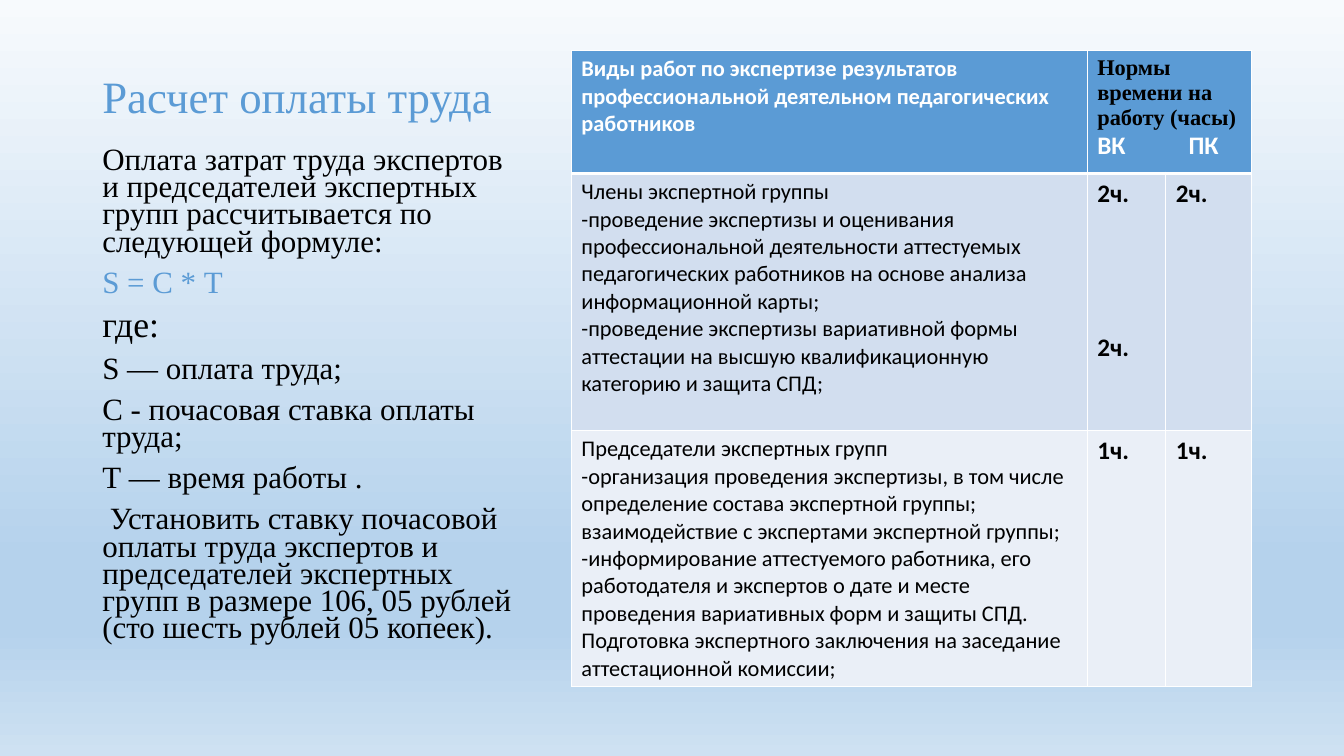
from lxml.etree import SubElement
from pptx import Presentation
from pptx.dml.color import RGBColor
from pptx.enum.text import MSO_ANCHOR
from pptx.oxml import parse_xml
from pptx.oxml.ns import nsdecls, qn
from pptx.util import Cm, Pt

SERIF, SANS = "Times New Roman", "Calibri"
BLUE, BLACK, WHITE = "5B9BD5", "000000", "FFFFFF"
ROW_FILLS = [BLUE, "D2DEEF", "EAEFF7"]
BACKGROUND_STOPS = [(0, "F7FAFD"), (74, "B5D2EC"), (83, "B5D2EC"), (100, "CEE1F2")]


def color(value):
    return RGBColor.from_string(value)


def add_span(para, text, font=SERIF, size=22.1, ink=BLACK, bold=False):
    span = para.add_run()
    span.text = text
    span.font.name = font
    span.font.size = Pt(size)
    span.font.bold = bold
    span.font.color.rgb = color(ink)


def fill_frame(frame, paragraphs, spacing=None, before=0):
    """Each paragraph is a list of (text, format) pairs."""
    for index, spans in enumerate(paragraphs):
        para = frame.add_paragraph() if index else frame.paragraphs[0]
        para.line_spacing = spacing
        para.space_before = Pt(before)
        for text, look in spans:
            add_span(para, text, **look)


class SlideBuilder:
    def __init__(self, page):
        self.page = page

    def background(self, stops):
        marks = "".join(
            f'<a:gs pos="{place * 1000}"><a:srgbClr val="{ink}"/></a:gs>'
            for place, ink in stops)
        self.page.element.cSld.insert(0, parse_xml(
            f'<p:bg {nsdecls("p", "a")}><p:bgPr><a:gradFill rotWithShape="1">'
            f'<a:gsLst>{marks}</a:gsLst><a:lin ang="5400000" scaled="0"/>'
            '</a:gradFill><a:effectLst/></p:bgPr></p:bg>'))

    def text(self, left, top, width, height, paragraphs,
             anchor=MSO_ANCHOR.TOP, **spacing):
        box = self.page.shapes.add_textbox(Cm(left), Cm(top), Cm(width), Cm(height))
        frame = box.text_frame
        frame.word_wrap = True
        frame.vertical_anchor = anchor
        fill_frame(frame, paragraphs, **spacing)
        return frame

    def table(self, left, top, widths, heights):
        table = self.page.shapes.add_table(
            len(heights), len(widths), Cm(left), Cm(top),
            Cm(sum(widths)), Cm(sum(heights))).table
        for column, width in zip(table.columns, widths):
            column.width = Cm(width)
        for number, (row, height) in enumerate(zip(table.rows, heights)):
            row.height = Cm(height)
            for cell in row.cells:
                cell.fill.solid()
                cell.fill.fore_color.rgb = color(ROW_FILLS[number])
                self.borders(cell, top=3 if number == 1 else 1,
                             bottom=3 if number == 0 else 1)
        return table

    def borders(self, cell, top, bottom):
        properties = cell._tc.get_or_add_tcPr()
        sides = [("L", 1), ("R", 1), ("T", top), ("B", bottom)]
        for position, (side, width) in enumerate(sides):
            properties.insert(position, parse_xml(
                f'<a:ln{side} {nsdecls("a")} w="{Pt(width)}"><a:solidFill>'
                f'<a:srgbClr val="{WHITE}"/></a:solidFill></a:ln{side}>'))


def build():
    deck = Presentation()
    deck.slide_width, deck.slide_height = Cm(33.87), Cm(19.05)
    slide = SlideBuilder(deck.slides.add_slide(deck.slide_layouts[6]))
    slide.background(BACKGROUND_STOPS)

    # Title
    slide.text(2.33, 1.27, 10.92, 1.96,
               [[("Расчет оплаты труда", dict(size=32, ink=BLUE))]],
               anchor=MSO_ANCHOR.BOTTOM, spacing=0.9)

    # Payment formula
    formula = slide.text(2.33, 3.63, 10.92, 12.65, [
        [("Оплата затрат труда экспертов и председателей экспертных групп "
          "рассчитывается по следующей формуле:", {})],
        [("S = C * Т", dict(ink=BLUE))],
        [("где:", dict(size=25.5))],
        [("S — оплата труда;", {})],
        [("С - почасовая ставка оплаты труда;", {})],
        [("Т — время работы .", {})],
        [("Установить ставку почасовой оплаты труда экспертов и председателей "
          "экспертных групп в размере 106, 05 рублей "
          "(сто шесть рублей 05 копеек).", {})],
    ], spacing=0.73, before=10)
    formula.paragraphs[-1]._p.get_or_add_pPr().set("indent", str(Cm(0.19)))

    # Table of working hours
    table = slide.table(14.4, 1.27, [13.0, 1.98, 2.16], [3.1, 6.48, 6.45])
    table.cell(0, 1).merge(table.cell(0, 2))
    heading = dict(font=SANS, size=16, ink=WHITE, bold=True)
    plain = dict(font=SANS, size=16)
    hours = dict(font=SANS, size=18, bold=True)
    contents = {
        (0, 0): [("Виды работ по экспертизе результатов профессиональной "
                  "деятельном педагогических работников", heading)],
        (0, 1): [("Нормы времени на работу (часы)", dict(size=16, bold=True)),
                 ("ВК\tПК", dict(hours, ink=WHITE))],
        (1, 0): [("Члены экспертной группы", plain),
                 ("-проведение экспертизы и оценивания профессиональной "
                  "деятельности аттестуемых педагогических работников на основе "
                  "анализа информационной карты;", plain),
                 ("-проведение экспертизы вариативной формы аттестации на высшую "
                  "квалификационную категорию и защита СПД;", plain)],
        (1, 1): [("2ч.", hours), ("2ч.", hours)],
        (1, 2): [("2ч.", hours)],
        (2, 0): [("Председатели экспертных групп", plain),
                 ("-организация проведения экспертизы, в том числе определение "
                  "состава экспертной группы; взаимодействие с экспертами "
                  "экспертной группы;", plain),
                 ("-информирование аттестуемого работника, его работодателя и "
                  "экспертов о дате и месте проведения вариативных форм и защиты "
                  "СПД. Подготовка экспертного заключения на заседание "
                  "аттестационной комиссии;", plain)],
        (2, 1): [("1ч.", hours)],
        (2, 2): [("1ч.", hours)],
    }
    for (row, column), lines in contents.items():
        fill_frame(table.cell(row, column).text_frame, [[line] for line in lines])

    # Second hour value stands beside the second kind of work
    table.cell(1, 1).text_frame.paragraphs[1].space_before = Pt(88)

    # Tab stop between the two column labels
    labels = table.cell(0, 1).text_frame.paragraphs[1]
    stops = SubElement(labels._p.get_or_add_pPr(), qn("a:tabLst"))
    SubElement(stops, qn("a:tab"), pos=str(Cm(2.3)), algn="l")

    deck.save("out.pptx")


if __name__ == "__main__":
    build()
